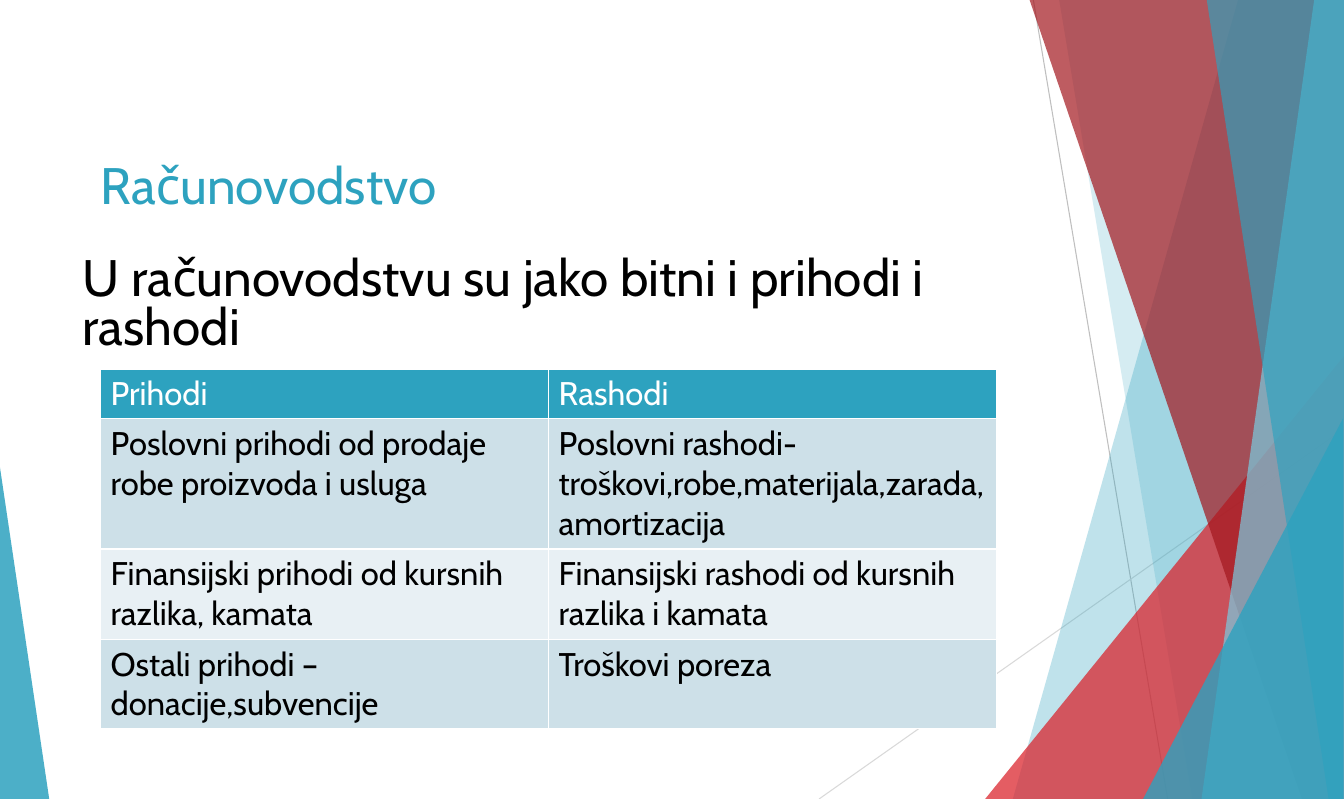
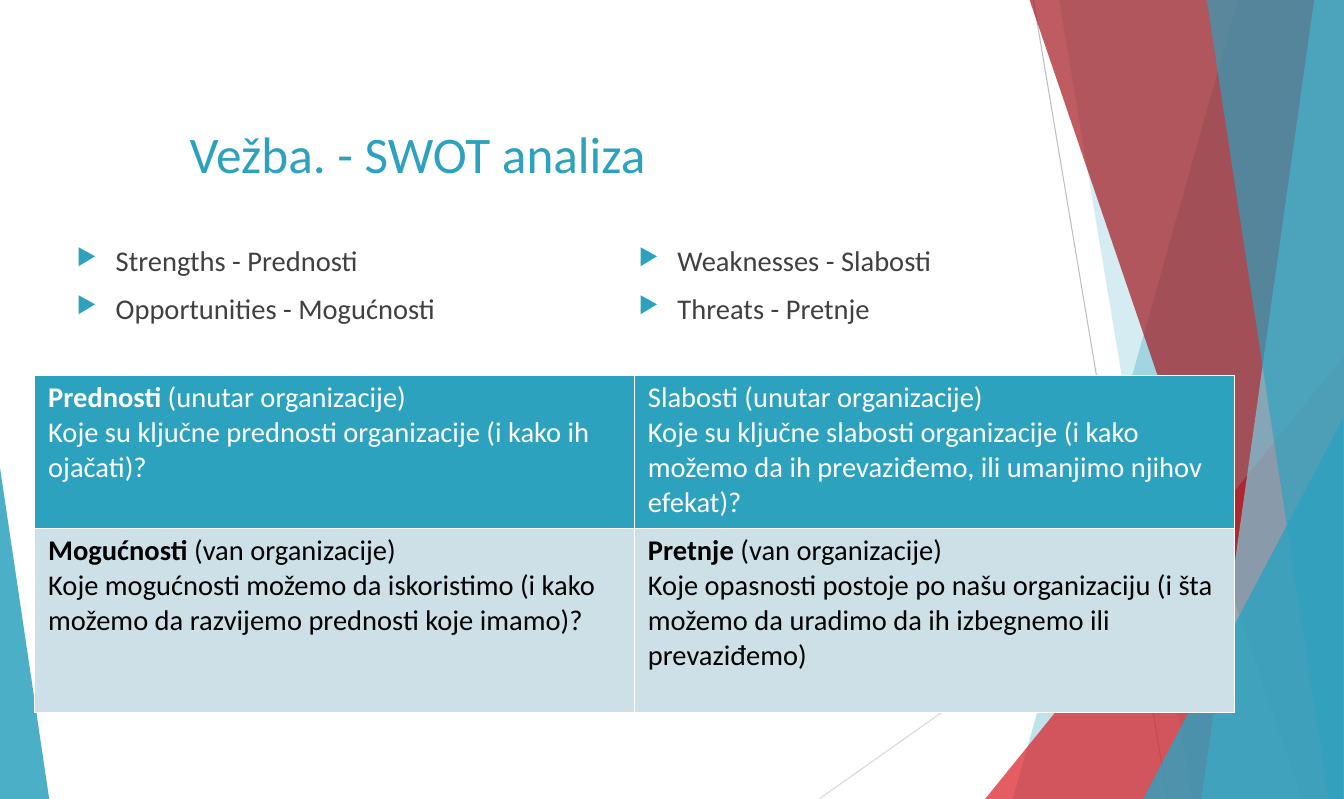
from lxml.etree import SubElement
from pptx import Presentation
from pptx.dml.color import RGBColor
from pptx.enum.shapes import MSO_CONNECTOR, MSO_SHAPE
from pptx.enum.text import MSO_ANCHOR, MSO_AUTO_SIZE, PP_ALIGN
from pptx.oxml.ns import qn
from pptx.util import Pt

PX = 9144  # EMU per px, 100 px to the inch
WIDTH, HEIGHT = 1311, 779

TEAL = RGBColor(0x2D, 0xA2, 0xBF)
SKY = RGBColor(0x7A, 0xCB, 0xE0)
RED = RGBColor(0xDA, 0x1F, 0x28)
DARK_RED = RGBColor(0xA3, 0x17, 0x1E)
GREY = RGBColor(0xBF, 0xBF, 0xBF)
LIGHT_GREY = RGBColor(0xD9, 0xD9, 0xD9)
TEXT_GREY = RGBColor(0x40, 0x40, 0x40)
BLACK = RGBColor(0, 0, 0)
WHITE = RGBColor(0xFF, 0xFF, 0xFF)
ROW_DARK = RGBColor(0xCD, 0xE0, 0xE8)
ROW_LIGHT = RGBColor(0xE8, 0xF0, 0xF4)

# Shared background, from back to front
LINES = [((1008, 0), (1139, 779), GREY), ((1311, 418), (799, 779), LIGHT_GREY)]
# Bands reach the right edge: (top x, bottom x); triangles: (box, apex)
FACETS = [
    ("band", (1208, 988), TEAL, 30),
    ("band", (1033, 1163), TEAL, 20),
    ("triangle", ((961, 346, 351, 433), 1), RED, 72),
    ("band", (1004, 1270), DARK_RED, 70),
    ("band", (1282, 1172), SKY, 70),
    ("band", (1177, 1296), TEAL, 65),
    ("triangle", ((1115, 408, 195, 371), 1), TEAL, 80),
    ("triangle", ((0, 456, 48, 323), 0), TEAL, 85),
]

# A cell is a list of paragraphs; a pair is a bold lead and plain text
ACCOUNTING = {
    "title": "Računovodstvo",
    "title_at": (88, 144),
    "font": "Cabin",
    "intro": "U računovodstvu su jako bitni i prihodi i rashodi",
    "table": {
        "at": (98, 360), "column": 437, "rows": [48, 127, 88, 87],
        "size": 23, "inset": 10,
        "cells": [
            [["Prihodi"], ["Rashodi"]],
            [["Poslovni prihodi od prodaje robe proizvoda i usluga"],
             ["Poslovni rashodi-troškovi,robe,materijala,zarada,", "amortizacija"]],
            [["Finansijski prihodi od kursnih razlika, kamata"],
             ["Finansijski rashodi od kursnih razlika i kamata"]],
            [["Ostali prihodi –donacije,subvencije"], ["Troškovi poreza"]],
        ],
    },
}
SWOT = {
    "title": "Vežba. - SWOT analiza",
    "title_at": (175, 114),
    "font": "Calibri",
    "bullets": [
        ["Strengths - Prednosti", "Opportunities - Mogućnosti"],
        ["Weaknesses - Slabosti", "Threats - Pretnje"],
    ],
    "table": {
        "at": (34, 366), "column": 585, "rows": [149, 180],
        "size": 20, "inset": 13,
        "cells": [
            [[("Prednosti ", "(unutar organizacije)"),
              "Koje su ključne prednosti organizacije (i kako ih ojačati)?"],
             ["Slabosti (unutar organizacije)",
              "Koje su ključne slabosti organizacije (i kako možemo da ih "
              "prevaziđemo, ili umanjimo njihov efekat)?"]],
            [[("Mogućnosti", " (van organizacije)"),
              "Koje mogućnosti možemo da iskoristimo (i kako možemo da "
              "razvijemo prednosti koje imamo)?"],
             [("Pretnje", " (van organizacije)"),
              "Koje opasnosti postoje po našu organizaciju (i šta možemo da "
              "uradimo da ih izbegnemo ili prevaziđemo)"]],
        ],
    },
}


def emu(*lengths):
    return [length * PX for length in lengths]


def write(text_frame, paragraphs, font, size, color):
    """Fill a text frame with paragraphs in one style."""
    text_frame.word_wrap = True
    for index, content in enumerate(paragraphs):
        paragraph = text_frame.paragraphs[0] if index == 0 else text_frame.add_paragraph()
        lead, rest = content if isinstance(content, tuple) else ("", content)
        for text, bold in ((lead, True), (rest, False)):
            if text:
                run = paragraph.add_run()
                run.text = text
                run.font.name, run.font.size, run.font.bold = font, Pt(size), bold
                run.font.color.rgb = color


def draw_background(slide):
    """Draw the lines and translucent facets; return their shapes."""
    shapes = []
    for start, end, color in LINES:
        line = slide.shapes.add_connector(MSO_CONNECTOR.STRAIGHT, *emu(*start, *end))
        line.line.color.rgb = color
        line.line.width = Pt(0.75)
        SubElement(line._element.spPr, qn("a:effectLst"))
        shapes.append(line)
    for kind, geometry, color, opacity in FACETS:
        if kind == "band":
            top, bottom = geometry
            builder = slide.shapes.build_freeform(top, -1, scale=PX)
            builder.add_line_segments([(WIDTH, -1), (WIDTH, HEIGHT), (bottom, HEIGHT)])
            facet = builder.convert_to_shape()
        else:
            box, apex = geometry
            facet = slide.shapes.add_shape(MSO_SHAPE.ISOSCELES_TRIANGLE, *emu(*box))
            facet.adjustments[0] = apex
        facet.shadow.inherit = False
        facet.line.fill.background()
        facet.fill.solid()
        facet.fill.fore_color.rgb = color
        fill_color = next(facet._element.spPr.iter(qn("a:srgbClr")))
        SubElement(fill_color, qn("a:alpha"), val=str(opacity * 1000))
        shapes.append(facet)
    return shapes


def set_title(slide, content):
    title = slide.shapes.title
    title.left, title.top, title.width, title.height = emu(*content["title_at"], 921, 121)
    text_frame = title.text_frame
    write(text_frame, [content["title"]], content["font"], 36, TEAL)
    text_frame.auto_size = MSO_AUTO_SIZE.NONE
    text_frame.vertical_anchor = MSO_ANCHOR.TOP
    text_frame.paragraphs[0].alignment = PP_ALIGN.LEFT


def add_bullets(paragraph):
    properties = paragraph._p.get_or_add_pPr()
    properties.set("marL", str(38 * PX))
    properties.set("indent", str(-38 * PX))
    bullet_color = SubElement(properties, qn("a:buClr"))
    SubElement(bullet_color, qn("a:srgbClr"), val=str(TEAL))
    SubElement(properties, qn("a:buSzPct"), val="80000")
    SubElement(properties, qn("a:buChar"), char="▶")


def set_borders(cell):
    properties = cell._tc.get_or_add_tcPr()
    for index, side in enumerate(("lnL", "lnR", "lnT", "lnB")):
        border = SubElement(properties, qn(f"a:{side}"), w=str(Pt(1)))
        fill = SubElement(border, qn("a:solidFill"))
        SubElement(fill, qn("a:srgbClr"), val=str(WHITE))
        properties.insert(index, border)


def add_table(slide, content):
    spec_table = content["table"]
    rows, cells, column = spec_table["rows"], spec_table["cells"], spec_table["column"]
    columns = len(cells[0])
    table = slide.shapes.add_table(
        len(rows), columns, *emu(*spec_table["at"], columns * column, sum(rows))).table
    for row_index, row in enumerate(cells):
        table.rows[row_index].height = rows[row_index] * PX
        if row_index == 0:
            fill, color = TEAL, WHITE
        else:
            fill, color = (ROW_DARK if row_index % 2 else ROW_LIGHT), BLACK
        for column_index, paragraphs in enumerate(row):
            cell = table.cell(row_index, column_index)
            cell.margin_left = cell.margin_right = spec_table["inset"] * PX
            cell.fill.solid()
            cell.fill.fore_color.rgb = fill
            set_borders(cell)
            write(cell.text_frame, paragraphs, content["font"], spec_table["size"], color)


def main():
    presentation = Presentation()
    presentation.slide_width, presentation.slide_height = emu(WIDTH, HEIGHT)
    layout = presentation.slide_layouts[5]
    accounting = presentation.slides.add_slide(layout)
    swot = presentation.slides.add_slide(layout)

    # The background belongs to the layout, so both slides inherit it
    for shape in draw_background(accounting):
        layout.shapes._spTree.append(shape._element)

    # Accounting slide
    set_title(accounting, ACCOUNTING)
    intro = accounting.shapes.add_textbox(*emu(71, 246, 926, 110)).text_frame
    write(intro, [ACCOUNTING["intro"]], ACCOUNTING["font"], 36, BLACK)
    intro.paragraphs[0].line_spacing = 0.8
    add_table(accounting, ACCOUNTING)

    # SWOT slide
    set_title(swot, SWOT)
    for index, items in enumerate(SWOT["bullets"]):
        box = swot.shapes.add_textbox(*emu(65 + index * 548, 232, 548, 100))
        write(box.text_frame, items, SWOT["font"], 20, TEXT_GREY)
        for position, paragraph in enumerate(box.text_frame.paragraphs):
            add_bullets(paragraph)
            paragraph.space_before = Pt(10 if position else 0)
    add_table(swot, SWOT)

    presentation.save("out.pptx")


if __name__ == "__main__":
    main()
